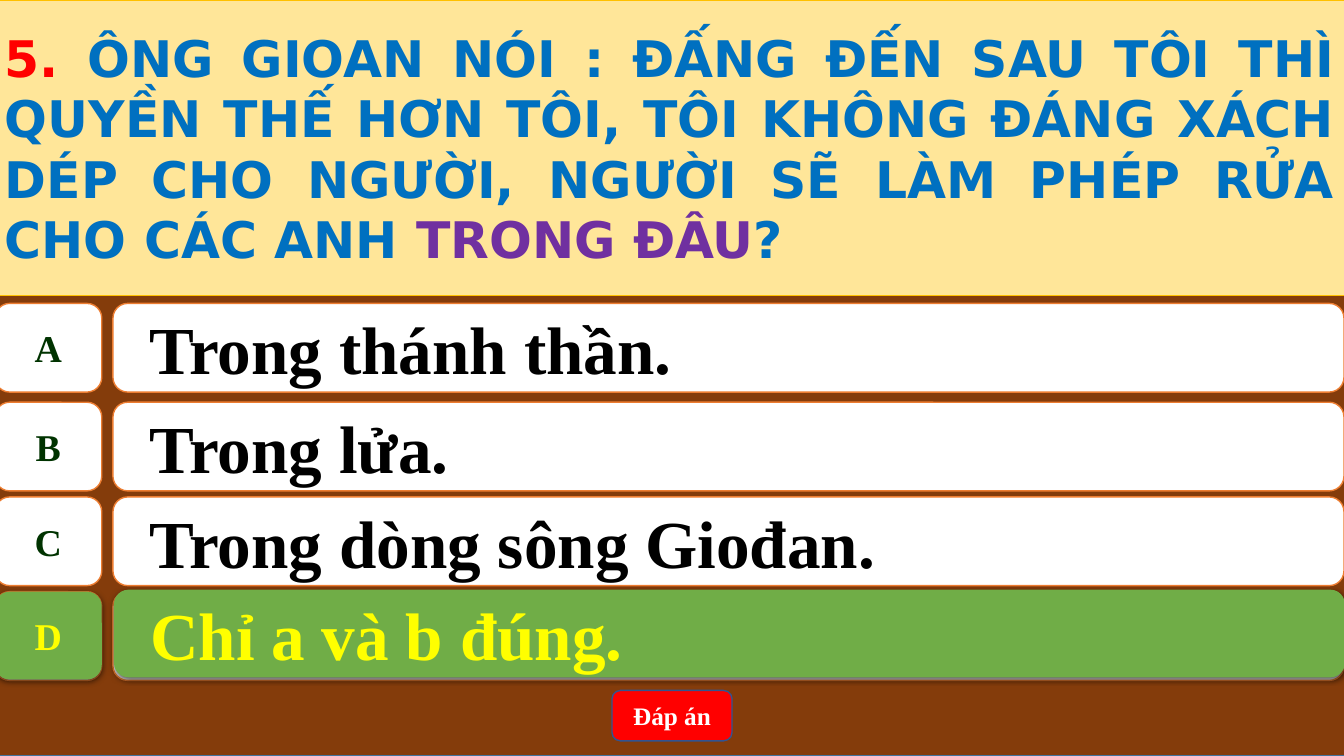
from lxml import etree
from pptx import Presentation
from pptx.dml.color import RGBColor
from pptx.enum import shapes, text
from pptx.oxml import ns
from pptx.util import Inches, Pt

BROWN = RGBColor(0x84, 0x3C, 0x0B)
STEEL = RGBColor(0x43, 0x73, 0x9E)
NAVY = RGBColor(0x32, 0x54, 0x91)
CREAM = RGBColor(0xFF, 0xE6, 0x99)
GOLD = RGBColor(0xFF, 0xC0, 0x00)
ORANGE = RGBColor(0xED, 0x7D, 0x31)
GREEN = RGBColor(0x70, 0xAD, 0x47)
DARK_GREEN = RGBColor(0x00, 0x33, 0x00)
YELLOW = RGBColor(0xFF, 0xFF, 0x00)
RED = RGBColor(0xFF, 0x00, 0x00)
BLUE = RGBColor(0x00, 0x70, 0xC0)
PURPLE = RGBColor(0x70, 0x30, 0xA0)
WHITE = RGBColor(0xFF, 0xFF, 0xFF)
BLACK = RGBColor(0x00, 0x00, 0x00)

SERIF = "Times New Roman"
SANS = "DejaVu Sans"
KIND = shapes.MSO_SHAPE
ALIGN = text.PP_ALIGN

LEFT, FULL_WIDTH = -0.05, 13.39
ROW_HEIGHT = 0.88
QUESTION = [
    ("5. ", RED),
    ("ÔNG GIOAN NÓI : ĐẤNG ĐẾN SAU TÔI THÌ QUYỀN THẾ HƠN TÔI, "
     "TÔI KHÔNG ĐÁNG XÁCH DÉP CHO NGƯỜI, NGƯỜI SẼ LÀM PHÉP RỬA "
     "CHO CÁC ANH ", BLUE),
    ("TRONG ĐÂU", PURPLE),
    ("?", BLUE),
]
ANSWERS = [
    ("A", "Trong thánh thần.", 3.01),
    ("B", "Trong lửa.", 3.99),
    ("C", "Trong dòng sông Giođan.", 4.93),
    ("D", "Chỉ a và b đúng.", 5.87),
]


def add_box(parent, kind, box, fill, line=None, line_width=1):
    """Filled preset shape, outlined only when a line colour is given."""
    panel = parent.add_shape(kind, *(Inches(length) for length in box))
    panel.shadow.inherit = False
    panel.fill.solid()
    panel.fill.fore_color.rgb = fill
    if line is None:
        panel.line.fill.background()
    else:
        panel.line.color.rgb = line
        panel.line.width = Pt(line_width)
    return panel


def write(panel, runs, size, font, align, wrap=True):
    """Bold, vertically centred paragraph made of (words, colour) runs."""
    frame = panel.text_frame
    frame.word_wrap = wrap
    frame.vertical_anchor = text.MSO_ANCHOR.MIDDLE
    paragraph = frame.paragraphs[0]
    paragraph.alignment = align
    for words, color in runs:
        run = paragraph.add_run()
        run.text = words
        run.font.size = Pt(size)
        run.font.name = font
        run.font.bold = True
        run.font.color.rgb = color
    return paragraph


def add_shadow(panel):
    """Soft black shadow falling straight down."""
    effects = panel.element.spPr.find(ns.qn("a:effectLst"))
    shadow = etree.SubElement(
        effects, ns.qn("a:outerShdw"), blurRad=str(Pt(4.5)),
        dist=str(Pt(1.5)), dir="5400000", algn="ctr", rotWithShape="0")
    color = etree.SubElement(shadow, ns.qn("a:srgbClr"), val="000000")
    etree.SubElement(color, ns.qn("a:alpha"), val="63000")


def add_answer(slide, letter, answer, letter_box, answer_box, fill, line,
               letter_color, answer_color):
    """Letter tile and answer bar, grouped as one row."""
    row = slide.shapes.add_group_shape().shapes
    tile = add_box(row, KIND.FLOWCHART_ALTERNATE_PROCESS, letter_box, fill, line)
    write(tile, [(letter, letter_color)], 27, SERIF, ALIGN.CENTER, wrap=False)
    bar = add_box(row, KIND.ROUNDED_RECTANGLE, answer_box, fill, line)
    paragraph = write(bar, [(answer, answer_color)], 48, SERIF, ALIGN.LEFT)
    paragraph.level = 1
    indents = paragraph._p.get_or_add_pPr()
    indents.set("marL", str(Inches(0.5)))
    indents.set("indent", str(Inches(-0.28)))
    return tile, bar


def main():
    prs = Presentation()
    prs.slide_width, prs.slide_height = Inches(13.33), Inches(7.5)
    slide = prs.slides.add_slide(prs.slide_layouts[6])

    # Backdrop
    add_box(slide.shapes, KIND.RECTANGLE, (LEFT, 0, FULL_WIDTH, 7.5), BROWN, STEEL)

    # Answer button
    button = add_box(slide.shapes, KIND.ROUNDED_RECTANGLE,
                     (6.07, 6.85, 1.19, 0.5), RED, NAVY)
    write(button, [("Đáp án", WHITE)], 18, SERIF, ALIGN.CENTER)

    # Four choices
    for letter, answer, top in ANSWERS:
        add_answer(slide, letter, answer, (LEFT, top, 1.06, ROW_HEIGHT),
                   (1.12, top, 12.21, ROW_HEIGHT), WHITE, ORANGE,
                   DARK_GREEN, BLACK)

    # Highlight over the correct choice
    letter, answer, top = ANSWERS[-1]
    for panel in add_answer(slide, letter, answer, (LEFT, top, 1.06, 0.87),
                            (1.13, top - 0.02, 12.21, 0.87), GREEN, None,
                            YELLOW, YELLOW):
        add_shadow(panel)

    # Question
    question = add_box(slide.shapes, KIND.RECTANGLE,
                       (LEFT, 0, FULL_WIDTH, 2.93), CREAM, GOLD, 0.5)
    write(question, QUESTION, 36, SANS, ALIGN.JUSTIFY)

    prs.save("out.pptx")


if __name__ == "__main__":
    main()
